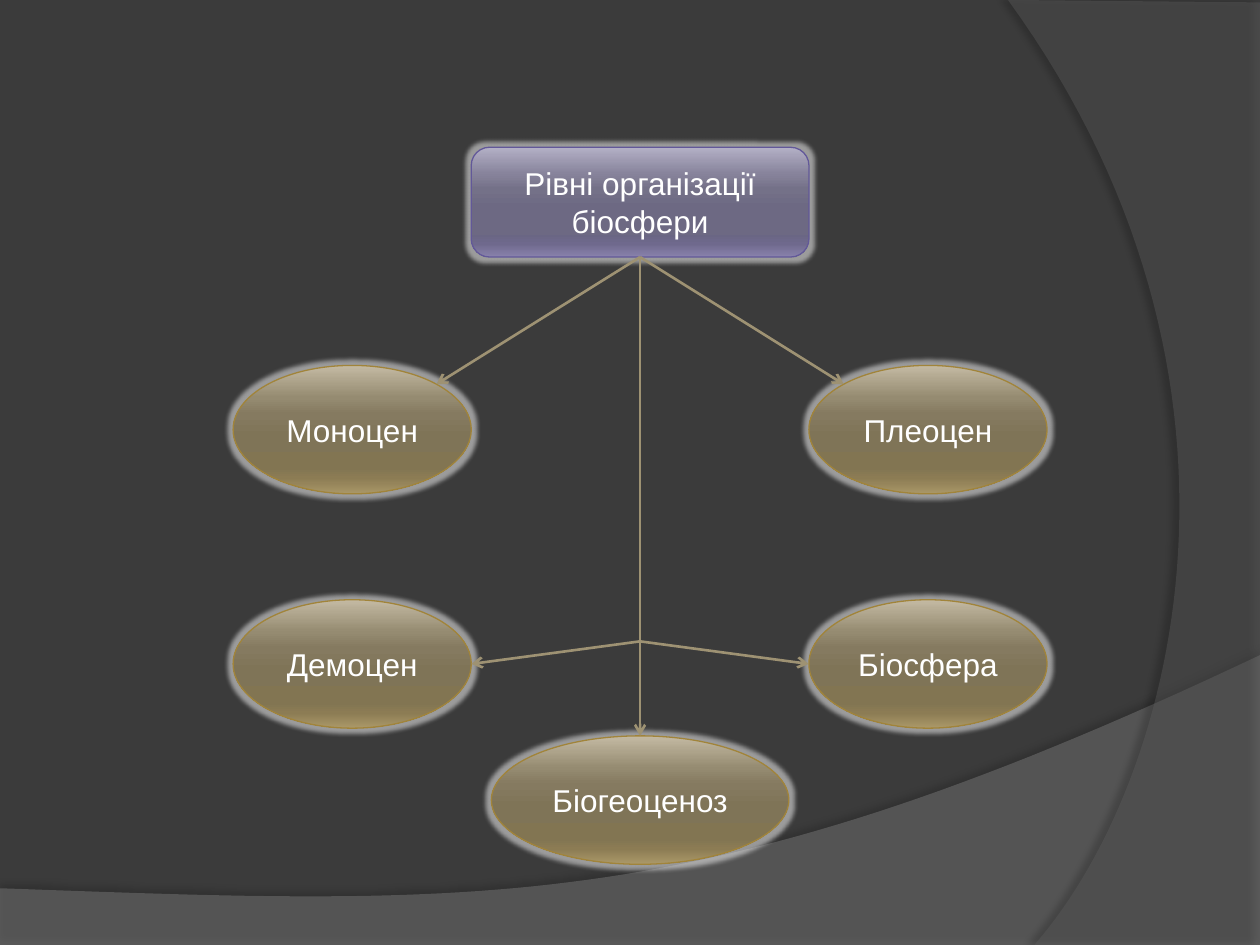
from dataclasses import dataclass
from math import sqrt

from lxml import etree
from pptx import Presentation
from pptx.dml.color import RGBColor
from pptx.enum.shapes import MSO_CONNECTOR, MSO_SHAPE
from pptx.enum.text import MSO_ANCHOR, PP_ALIGN
from pptx.oxml.ns import qn
from pptx.util import Pt

STRAIGHT = MSO_CONNECTOR.STRAIGHT
ROUNDED = MSO_SHAPE.ROUNDED_RECTANGLE
OVAL = MSO_SHAPE.OVAL
MIDDLE = MSO_ANCHOR.MIDDLE
CENTER = PP_ALIGN.CENTER
TOP, BOTTOM = 0, 2

COLORS = {
    "background": "3B3B3B",
    "wave": "7F7F7F",
    "side": "5E5E5E",
    "shadow": "000000",
    "glow": "FFFFFF",
    "text": "FFFFFF",
    "root_line": "625899",
    "level_line": "A1843A",
    "arrow": "9E9273",
}
STOPS = (0, 25, 38, 55, 80, 88, 100)
ROOT_GRADIENT = ("B3B0C6", "86829A", "747188", "6D6983", "6A6684", "6F698D", "8982AC")
LEVEL_GRADIENT = ("C4BAA3", "958B71", "857A60", "7F7457", "827552", "8C7C54", "AA9868")

WIDTH, HEIGHT = 720, 540
AXIS = 365.76
SIDE_OFFSET = 164.5
LEVEL_WIDTH, LEVEL_HEIGHT = 136.1, 73.4
UPPER_ROW, LOWER_ROW, LAST_ROW = 208.8, 342.7, 420.5
JUNCTION = 366.5


@dataclass
class Node:
    text: str
    center: float
    top: float
    width: float = LEVEL_WIDTH
    height: float = LEVEL_HEIGHT
    kind: int = OVAL
    gradient: tuple = LEVEL_GRADIENT
    line: str = "level_line"


@dataclass
class Backdrop:
    outline: list
    color: str
    opacity: int
    shadow_opacity: int
    shadow_distance: float
    shadow_direction: int


ROOT = Node("Рівні організації біосфери", AXIS, 84.2, 193, 62.7, ROUNDED, ROOT_GRADIENT, "root_line")
LAST = Node("Біогеоценоз", AXIS, LAST_ROW, 170)
SIDE_NODES = [
    Node("Моноцен", AXIS - SIDE_OFFSET, UPPER_ROW),
    Node("Плеоцен", AXIS + SIDE_OFFSET, UPPER_ROW),
    Node("Демоцен", AXIS - SIDE_OFFSET, LOWER_ROW),
    Node("Біосфера", AXIS + SIDE_OFFSET, LOWER_ROW),
]


def rgb(name: str) -> RGBColor:
    return RGBColor.from_string(COLORS[name])


def curve(start: tuple, first: tuple, second: tuple, end: tuple, steps: int = 60) -> list:
    points = []
    for step in range(steps + 1):
        t = step / steps
        weights = ((1 - t) ** 3, 3 * t * (1 - t) ** 2, 3 * t * t * (1 - t), t**3)
        points.append(tuple(sum(w * p for w, p in zip(weights, axis))
                            for axis in zip(start, first, second, end)))
    return points


def add_color(parent, value: str, opacity: int = 100) -> None:
    color = etree.SubElement(parent, qn("a:srgbClr"), val=value)
    if opacity < 100:
        etree.SubElement(color, qn("a:alpha"), val=str(opacity * 1000))


def add_effect(shape, tag: str, color: str, opacity: int, **attributes: str) -> None:
    shape.shadow.inherit = False
    effects = shape._element.spPr.find(qn("a:effectLst"))
    add_color(etree.SubElement(effects, qn(tag), **attributes), COLORS[color], opacity)


def draw_backdrop(slide, backdrop: Backdrop) -> None:
    start, *rest = [(Pt(x), Pt(y)) for x, y in backdrop.outline]
    builder = slide.shapes.build_freeform(*start)
    builder.add_line_segments(rest, close=True)
    shape = builder.convert_to_shape()
    shape.fill.solid()
    shape.fill.fore_color.rgb = rgb(backdrop.color)
    color = shape._element.spPr.find(qn("a:solidFill"))[0]
    etree.SubElement(color, qn("a:alpha"), val=str(backdrop.opacity * 1000))
    shape.line.fill.background()
    add_effect(shape, "a:outerShdw", "shadow", backdrop.shadow_opacity,
               blurRad=str(Pt(4)), dist=str(Pt(backdrop.shadow_distance)),
               dir=str(backdrop.shadow_direction * 60000), rotWithShape="0")


def draw_node(slide, node: Node):
    shape = slide.shapes.add_shape(node.kind, Pt(node.center - node.width / 2), Pt(node.top),
                                   Pt(node.width), Pt(node.height))
    shape.fill.gradient()
    shape.fill.gradient_angle = 270
    stops = shape._element.spPr.find(".//" + qn("a:gsLst"))
    for stop in list(stops):
        stops.remove(stop)
    for position, value in zip(STOPS, node.gradient):
        add_color(etree.SubElement(stops, qn("a:gs"), pos=str(position * 1000)), value)
    shape.line.color.rgb = rgb(node.line)
    shape.line.width = Pt(0.75)
    add_effect(shape, "a:glow", "glow", 50, rad=str(Pt(5)))
    frame = shape.text_frame
    frame.word_wrap = True
    frame.vertical_anchor = MIDDLE
    paragraph = frame.paragraphs[0]
    paragraph.text = node.text
    paragraph.alignment = CENTER
    paragraph.font.name = "Arial"
    paragraph.font.size = Pt(18)
    paragraph.font.color.rgb = rgb("text")
    return shape


def draw_arrow(slide, start: tuple, end: tuple):
    connector = slide.shapes.add_connector(STRAIGHT, *map(Pt, start + end))
    connector.line.color.rgb = rgb("arrow")
    connector.line.width = Pt(1.5)
    etree.SubElement(connector.line._get_or_add_ln(), qn("a:tailEnd"), type="arrow")
    etree.SubElement(connector._element.spPr, qn("a:effectLst"))
    return connector


def main() -> None:
    presentation = Presentation()
    presentation.slide_width, presentation.slide_height = Pt(WIDTH), Pt(HEIGHT)
    slide = presentation.slides.add_slide(presentation.slide_layouts[6])
    slide.background.fill.solid()
    slide.background.fill.fore_color.rgb = rgb("background")

    wave = curve((WIDTH, 374.4), (402.5, 524.9), (281.5, 517.7), (0, 507.6))
    side = curve((591.1, HEIGHT), (673.2, 445.7), (733, 216), (576, 0))
    draw_backdrop(slide, Backdrop([(0, HEIGHT), (WIDTH, HEIGHT)] + wave, "wave", 45, 35, 3.5, 270))
    draw_backdrop(slide, Backdrop([(WIDTH, 1.4), (WIDTH, HEIGHT)] + side, "side", 40, 45, 4, 180))

    root = draw_node(slide, ROOT)
    for node in SIDE_NODES:
        draw_node(slide, node)
    last = draw_node(slide, LAST)

    root_bottom = (AXIS, ROOT.top + ROOT.height)
    for node in SIDE_NODES:
        inward = 1 if node.center < AXIS else -1
        middle = node.top + node.height / 2
        if node.top == UPPER_ROW:
            diagonal = 1 / sqrt(2)
            end = (node.center + inward * diagonal * node.width / 2,
                   middle - diagonal * node.height / 2)
            draw_arrow(slide, root_bottom, end).begin_connect(root, BOTTOM)
        else:
            draw_arrow(slide, (AXIS, JUNCTION), (node.center + inward * node.width / 2, middle))
    trunk = draw_arrow(slide, root_bottom, (AXIS, LAST.top))
    trunk.begin_connect(root, BOTTOM)
    trunk.end_connect(last, TOP)

    presentation.save("out.pptx")


if __name__ == "__main__":
    main()
